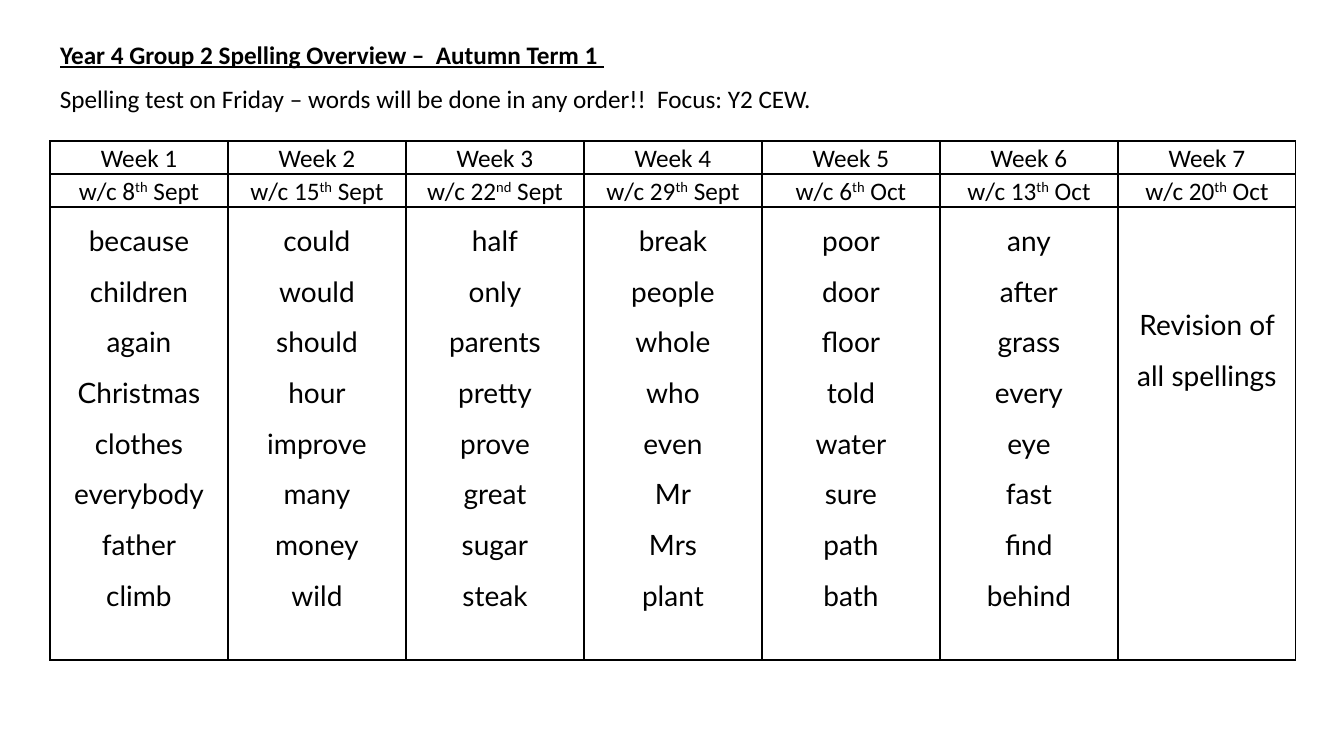
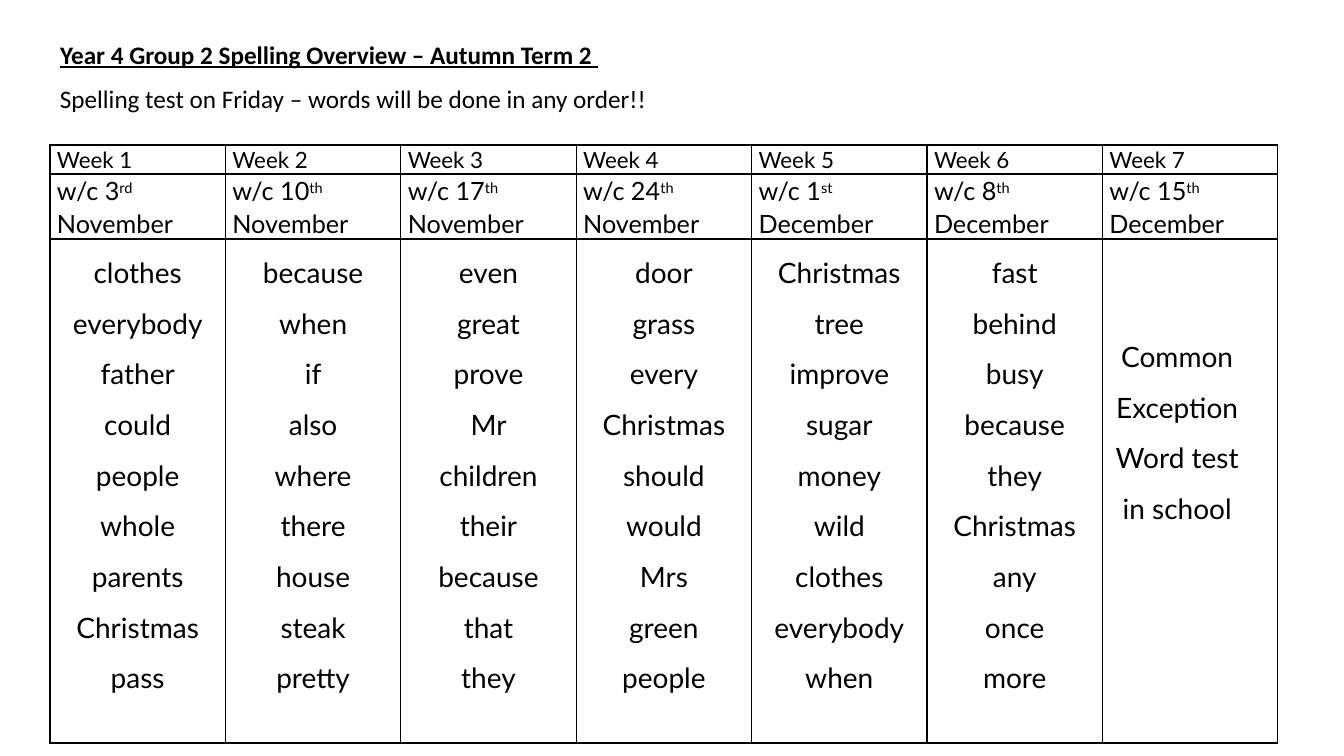
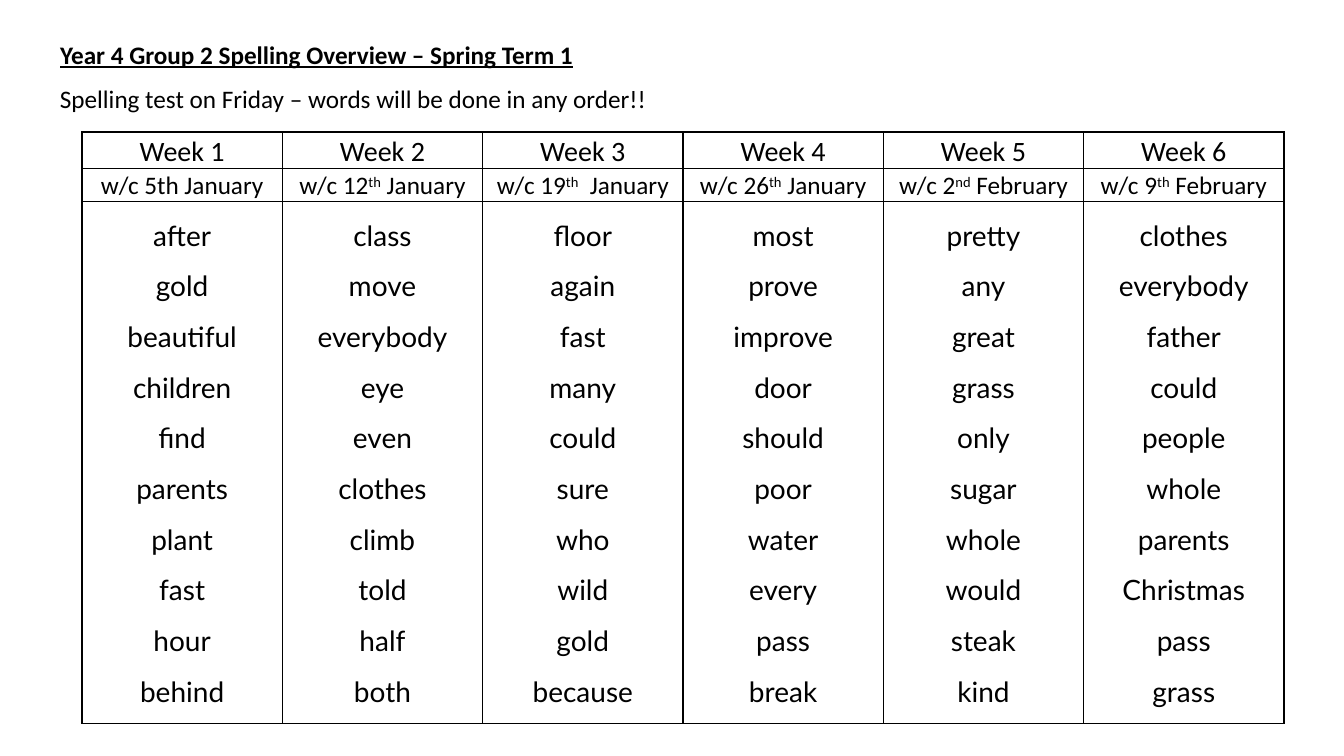
from lxml import etree
from pptx import Presentation
from pptx import util as u
from pptx.dml.color import RGBColor
from pptx.enum import text
from pptx.oxml import ns

SCALE = 12192000 / 1344
BLACK = RGBColor(0, 0, 0)
BODY_FONT = "Calibri"
WORD_FONT = "Lato"
NOTE = "Spelling test on Friday – words will be done in any order!!"
CENTER = text.PP_ALIGN.CENTER
LEFT = text.PP_ALIGN.LEFT


def px(length):
    return u.Emu(round(length * SCALE))


def write(frame, lines, font=BODY_FONT, size=18, bold=False, underline=False,
          align=LEFT, spacing=1.07):
    frame.word_wrap = True
    for index, line in enumerate(lines):
        paragraph = frame.paragraphs[0] if index == 0 else frame.add_paragraph()
        paragraph.alignment = align
        paragraph.line_spacing = spacing
        for part, content in enumerate(line.split("^")):
            run = paragraph.add_run()
            run.text = content
            run.font.name = font
            run.font.size = u.Pt(size)
            run.font.bold = bold
            run.font.underline = underline
            run.font.color.rgb = BLACK
            if part % 2:
                run.font._element.set("baseline", "30000")


def add_borders(cell):
    properties = cell._tc.get_or_add_tcPr()
    for side in ("lnL", "lnR", "lnT", "lnB"):
        line = etree.SubElement(properties, ns.qn("a:" + side), w=str(u.Pt(1)))
        fill = etree.SubElement(line, ns.qn("a:solidFill"))
        etree.SubElement(fill, ns.qn("a:srgbClr"), val=str(BLACK))


class SpellingDeck:
    def __init__(self):
        self.presentation = Presentation()
        self.presentation.slide_width = px(1344)
        self.presentation.slide_height = px(756)
        self.slide = None

    def add_slide(self, title, note):
        layout = self.presentation.slide_layouts[5]
        self.slide = self.presentation.slides.add_slide(layout)
        self.add_heading(self.slide.shapes.title, 32, title, bold=True, underline=True)
        box = self.slide.shapes.add_textbox(0, 0, 0, 0)
        self.add_heading(box, 76, note)

    def add_heading(self, shape, top, content, **style):
        shape.left, shape.top = px(50), px(top)
        shape.width, shape.height = px(1229), px(43)
        frame = shape.text_frame
        frame.auto_size = text.MSO_AUTO_SIZE.NONE
        frame.vertical_anchor = text.MSO_ANCHOR.TOP
        write(frame, [content], **style)

    def add_weeks(self, left, top, width, heights, dates, columns,
                  week_style, date_style, side=7):
        count = len(dates)
        frame = self.slide.shapes.add_table(
            3, count, px(left), px(top), px(width), px(sum(heights)))
        table = frame.table
        table.first_row = table.horz_banding = False
        for row, height in zip(table.rows, heights):
            row.height = px(height)
        word_style = dict(font=WORD_FONT, size=20, align=CENTER, spacing=1.5)
        for index, (date, words) in enumerate(zip(dates, columns)):
            table.columns[index].width = px(width * (index + 1) / count) - px(width * index / count)
            entries = (([f"Week {index + 1}"], week_style),
                       ([date], date_style), (words, word_style))
            for row, (lines, style) in enumerate(entries):
                cell = table.cell(row, index)
                cell.margin_left = cell.margin_right = px(side)
                cell.margin_top = cell.margin_bottom = 0
                add_borders(cell)
                cell.fill.background()
                write(cell.text_frame, lines, **style)
        return table


def lower_last_column(table, left, right):
    cell = table.cell(2, len(table.columns) - 1)
    cell.margin_top = px(84)
    cell.margin_left, cell.margin_right = px(left), px(right)


def split_words(*columns):
    return [column.split() for column in columns]


def main():
    deck = SpellingDeck()
    centered = dict(align=CENTER)

    deck.add_slide("Year 4 Group 2 Spelling Overview –  Autumn Term 1 ",
                   NOTE + "  Focus: Y2 CEW.")
    table = deck.add_weeks(
        50, 141, 1246, (33, 33, 453),
        ["w/c 8^th^ Sept", "w/c 15^th^ Sept", "w/c 22^nd^ Sept", "w/c 29^th^ Sept",
         "w/c 6^th^ Oct", "w/c 13^th^ Oct", "w/c 20^th^ Oct"],
        split_words(
            "because children again Christmas clothes everybody father climb",
            "could would should hour improve many money wild",
            "half only parents pretty prove great sugar steak",
            "break people whole who even Mr Mrs plant",
            "poor door floor told water sure path bath",
            "any after grass every eye fast find behind",
        ) + [["Revision of all spellings"]],
        centered, centered, side=6)
    lower_last_column(table, 6, 6)

    deck.add_slide("Year 4 Group 2 Spelling Overview – Autumn Term 2 ", NOTE)
    table = deck.add_weeks(
        50, 145, 1228, (29, 65, 504),
        ["w/c 3^rd^ November", "w/c 10^th^ November", "w/c 17^th^ November",
         "w/c 24^th^ November", "w/c 1^st^ December", "w/c 8^th^ December",
         "w/c 15^th^ December"],
        split_words(
            "clothes everybody father could people whole parents Christmas pass",
            "because when if also where there house steak pretty",
            "even great prove Mr children their because that they",
            "door grass every Christmas should would Mrs green people",
            "Christmas tree improve sugar money wild clothes everybody when",
            "fast behind busy because they Christmas any once more",
        ) + [["Common Exception Word test in school"]],
        dict(font=WORD_FONT, size=16), dict(font=WORD_FONT))
    lower_last_column(table, 4, 30)

    deck.add_slide("Year 4 Group 2 Spelling Overview – Spring Term 1", NOTE)
    deck.add_weeks(
        82, 132, 1202, (36, 33, 522),
        ["w/c 5th January", "w/c 12^th^ January", "w/c 19^th^  January",
         "w/c 26^th^ January", "w/c 2^nd^ February", "w/c 9^th^ February"],
        split_words(
            "after gold beautiful children find parents plant fast hour behind",
            "class move everybody eye even clothes climb told half both",
            "floor again fast many could sure who wild gold because",
            "most prove improve door should poor water every pass break",
            "pretty any great grass only sugar whole would steak kind",
            "clothes everybody father could people whole parents Christmas pass grass",
        ),
        dict(size=20, align=CENTER), centered)

    deck.presentation.save("out.pptx")


if __name__ == "__main__":
    main()
